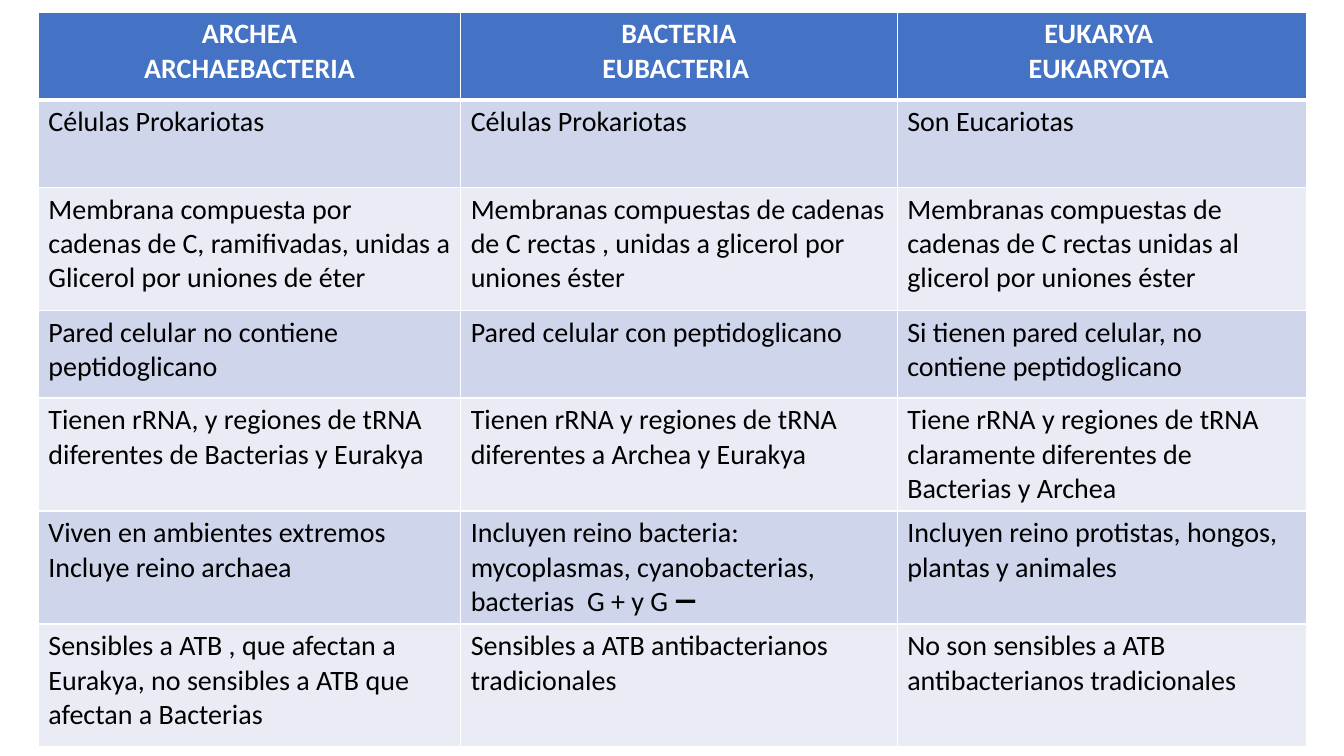
"""Build a slide with a table comparing the three domains of life."""
from dataclasses import dataclass

import lxml.etree
import pptx
import pptx.dml.color
import pptx.enum.text
import pptx.oxml.ns
import pptx.table
import pptx.util

SLIDE_WIDTH = pptx.util.Inches(13.33)
SLIDE_HEIGHT = pptx.util.Inches(7.5)
LEFT_PERCENT, TOP_PERCENT = 2.85, 1.6
SHORT_PERCENT, TALL_PERCENT = 11.6, 16.27
FONT_NAME, FONT_SIZE = "Calibri", 20
HEADER_FILL, BAND_FILLS = "4472C4", ("E9EBF5", "CFD5EA")
WHITE, BLACK = "FFFFFF", "000000"
THIN_BORDER, HEADER_BORDER = 1, 3


@dataclass(frozen=True)
class Domain:
    width_percent: float
    heading: str
    traits: tuple[str, ...]


DOMAINS = (
    Domain(31.43, "ARCHEA\nARCHAEBACTERIA", (
        "Células Prokariotas",
        "Membrana compuesta por cadenas de C, ramifivadas, unidas a Glicerol por uniones de éter",
        "Pared celular no contiene peptidoglicano",
        "Tienen rRNA, y regiones de tRNA diferentes de Bacterias y Eurakya",
        "Viven en ambientes extremos\nIncluye reino archaea",
        "Sensibles a ATB , que afectan a Eurakya, no sensibles a ATB que afectan a Bacterias",
    )),
    Domain(32.48, "BACTERIA\nEUBACTERIA ", (
        "Células Prokariotas",
        "Membranas compuestas de cadenas de C rectas , unidas a glicerol por uniones éster",
        "Pared celular con peptidoglicano",
        "Tienen rRNA y regiones de tRNA diferentes a Archea y Eurakya",
        "Incluyen reino bacteria: mycoplasmas, cyanobacterias, bacterias  G + y G ➖",
        "Sensibles a ATB antibacterianos tradicionales",
    )),
    Domain(30.46, "EUKARYA \nEUKARYOTA ", (
        "Son Eucariotas",
        "Membranas compuestas de cadenas de C rectas unidas al glicerol por uniones éster",
        "Si tienen pared celular, no contiene peptidoglicano",
        "Tiene rRNA y regiones de tRNA claramente diferentes de Bacterias y Archea",
        "Incluyen reino protistas, hongos, plantas y animales",
        "No son sensibles a ATB antibacterianos tradicionales",
    )),
)
ROW_PERCENTS = (SHORT_PERCENT, SHORT_PERCENT, TALL_PERCENT, SHORT_PERCENT,
                SHORT_PERCENT, SHORT_PERCENT, TALL_PERCENT)


def share(percent: float, whole: int) -> int:
    """Return a percentage of a length."""
    return round(whole * percent / 100)


def color(code: str) -> pptx.dml.color.RGBColor:
    """Turn a hex string into a colour."""
    return pptx.dml.color.RGBColor.from_string(code)


def draw_borders(cell: pptx.table._Cell, row: int) -> None:
    """Rule the four sides of a cell, heavier between header and body."""
    properties = cell._tc.get_or_add_tcPr()
    weights = {
        "a:lnL": THIN_BORDER,
        "a:lnR": THIN_BORDER,
        "a:lnT": HEADER_BORDER if row == 1 else THIN_BORDER,
        "a:lnB": HEADER_BORDER if row == 0 else THIN_BORDER,
    }
    for position, (tag, weight) in enumerate(weights.items()):
        line = lxml.etree.Element(pptx.oxml.ns.qn(tag), w=str(pptx.util.Pt(weight)))
        fill = lxml.etree.SubElement(line, pptx.oxml.ns.qn("a:solidFill"))
        lxml.etree.SubElement(fill, pptx.oxml.ns.qn("a:srgbClr"), val=WHITE)
        properties.insert(position, line)


def fill_cell(cell: pptx.table._Cell, row: int, text: str) -> None:
    """Write and format one cell."""
    is_header = row == 0
    cell.fill.solid()
    cell.fill.fore_color.rgb = color(HEADER_FILL if is_header else BAND_FILLS[row % 2])
    draw_borders(cell, row)
    cell.text_frame.text = text
    for para in cell.text_frame.paragraphs:
        if is_header:
            para.alignment = pptx.enum.text.PP_ALIGN.CENTER
        for span in para.runs:
            span.font.name = FONT_NAME
            span.font.size = pptx.util.Pt(FONT_SIZE)
            span.font.bold = is_header
            span.font.color.rgb = color(WHITE if is_header else BLACK)


def main() -> None:
    """Create the deck and save it."""
    deck = pptx.Presentation()
    deck.slide_width, deck.slide_height = SLIDE_WIDTH, SLIDE_HEIGHT
    page = deck.slides.add_slide(deck.slide_layouts[6])
    table = page.shapes.add_table(
        len(ROW_PERCENTS), len(DOMAINS),
        share(LEFT_PERCENT, SLIDE_WIDTH), share(TOP_PERCENT, SLIDE_HEIGHT),
        share(sum(domain.width_percent for domain in DOMAINS), SLIDE_WIDTH),
        share(sum(ROW_PERCENTS), SLIDE_HEIGHT),
    ).table
    for row, percent in enumerate(ROW_PERCENTS):
        table.rows[row].height = share(percent, SLIDE_HEIGHT)
    for column, domain in enumerate(DOMAINS):
        table.columns[column].width = share(domain.width_percent, SLIDE_WIDTH)
        for row, text in enumerate((domain.heading, *domain.traits)):
            fill_cell(table.cell(row, column), row, text)
    deck.save("out.pptx")


if __name__ == "__main__":
    main()
